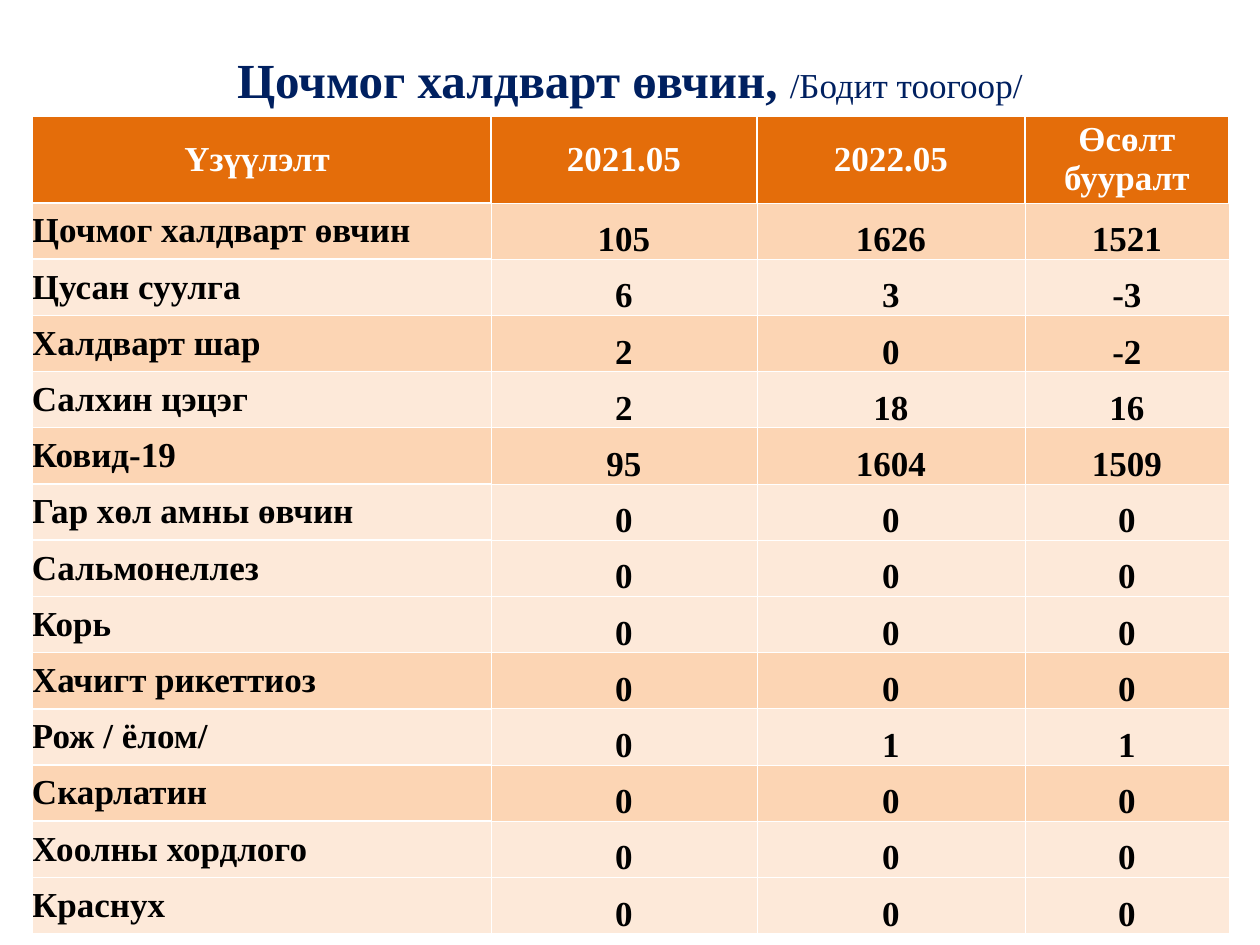
from lxml.etree import SubElement
from pptx import Presentation
from pptx.dml.color import RGBColor
from pptx.enum.text import MSO_ANCHOR as Anchor, PP_ALIGN as Align
from pptx.oxml.ns import qn
from pptx.util import Emu, Pt

PX = 914400 // 126
FONT = "Times New Roman"
WHITE, BLACK, NAVY = "FFFFFF", "000000", "002060"
ORANGE, PEACH, CREAM = "E46D0A", "FCD5B4", "FDE9D9"

COLUMN_WIDTHS = [459, 266, 268, 204]
HEADER_HEIGHT, BODY_HEIGHT = 87, 731
HEADERS = ["Үзүүлэлт ", "2021.05", "2022.05", "Өсөлт бууралт"]
DISEASES = [
    ("Цочмог халдварт өвчин", 105, 1626, 1521, PEACH),
    ("Цусан суулга", 6, 3, -3, CREAM),
    ("Халдварт шар", 2, 0, -2, PEACH),
    ("Салхин цэцэг", 2, 18, 16, CREAM),
    ("Ковид-19", 95, 1604, 1509, PEACH),
    ("Гар хөл амны өвчин", 0, 0, 0, CREAM),
    ("Сальмонеллез", 0, 0, 0, CREAM),
    ("Корь", 0, 0, 0, CREAM),
    ("Хачигт рикеттиоз", 0, 0, 0, PEACH),
    ("Рож / ёлом/", 0, 1, 1, CREAM),
    ("Скарлатин", 0, 0, 0, PEACH),
    ("Хоолны хордлого", 0, 0, 0, CREAM),
    ("Краснух", 0, 0, 0, CREAM),
]


def px(length):
    return Emu(length * PX)


def rgb(color):
    return RGBColor.from_string(color)


def apply_format(target, values):
    for name, value in values.items():
        setattr(target, name, value)


def add_run(paragraph, text, size, color, bold):
    run = paragraph.add_run()
    run.text = text
    apply_format(run.font, {"name": FONT, "size": Pt(size), "bold": bold})
    run.font.color.rgb = rgb(color)


def add_title(slide):
    shape = slide.shapes.add_textbox(px(63), px(32), px(1134), px(94))
    frame = shape.text_frame
    apply_format(frame, {"word_wrap": True, "vertical_anchor": Anchor.MIDDLE})
    paragraph = frame.paragraphs[0]
    paragraph.alignment = Align.CENTER
    add_run(paragraph, "Цочмог халдварт өвчин, ", 28, NAVY, True)
    add_run(paragraph, "/Бодит тоогоор/", 20, NAVY, False)


def set_borders(cell, widths):
    properties = cell._tc.get_or_add_tcPr()
    for side, width in zip("LRTB", widths):
        line = SubElement(properties, qn(f"a:ln{side}"), w=str(Pt(width)))
        fill = SubElement(line, qn("a:solidFill"))
        SubElement(fill, qn("a:srgbClr"), val=WHITE)


def border_widths(row, column):
    if row == 0:
        return 1, 1, 1, 0.5 if column else 1.5
    if column == 0:
        return 1, 0.5, 1.5 if row == 1 else 1, 1
    return 0.5, 0.5, 0.5, 0.5


def fill_cell(table, row, column, text, fill):
    cell = table.cell(row, column)
    is_header, is_label = row == 0, column == 0
    set_borders(cell, border_widths(row, column))
    apply_format(cell, {
        "margin_left": 0, "margin_right": 0, "margin_top": 0, "margin_bottom": 0,
        "vertical_anchor": Anchor.MIDDLE if is_header or is_label else Anchor.BOTTOM,
    })
    cell.fill.solid()
    cell.fill.fore_color.rgb = rgb(fill)
    paragraph = cell.text_frame.paragraphs[0]
    paragraph.alignment = Align.LEFT if is_label and not is_header else Align.CENTER
    add_run(paragraph, str(text), 20, WHITE if is_header else BLACK, True)


def add_disease_table(slide):
    rows = [(*HEADERS, ORANGE), *DISEASES]
    frame = slide.shapes.add_table(
        len(rows), len(HEADERS), px(32), px(116),
        px(sum(COLUMN_WIDTHS)), px(HEADER_HEIGHT + BODY_HEIGHT))
    table = frame.table
    for column, width in zip(table.columns, COLUMN_WIDTHS):
        column.width = px(width)
    for row in table.rows:
        row.height = px(BODY_HEIGHT) // len(DISEASES)
    table.rows[0].height = px(HEADER_HEIGHT)
    for row, (*texts, fill) in enumerate(rows):
        for column, text in enumerate(texts):
            fill_cell(table, row, column, text, fill)


def main():
    presentation = Presentation()
    apply_format(presentation, {"slide_width": px(1260), "slide_height": px(945)})
    slide = presentation.slides.add_slide(presentation.slide_layouts[6])
    add_title(slide)
    add_disease_table(slide)
    presentation.save("out.pptx")


if __name__ == "__main__":
    main()
